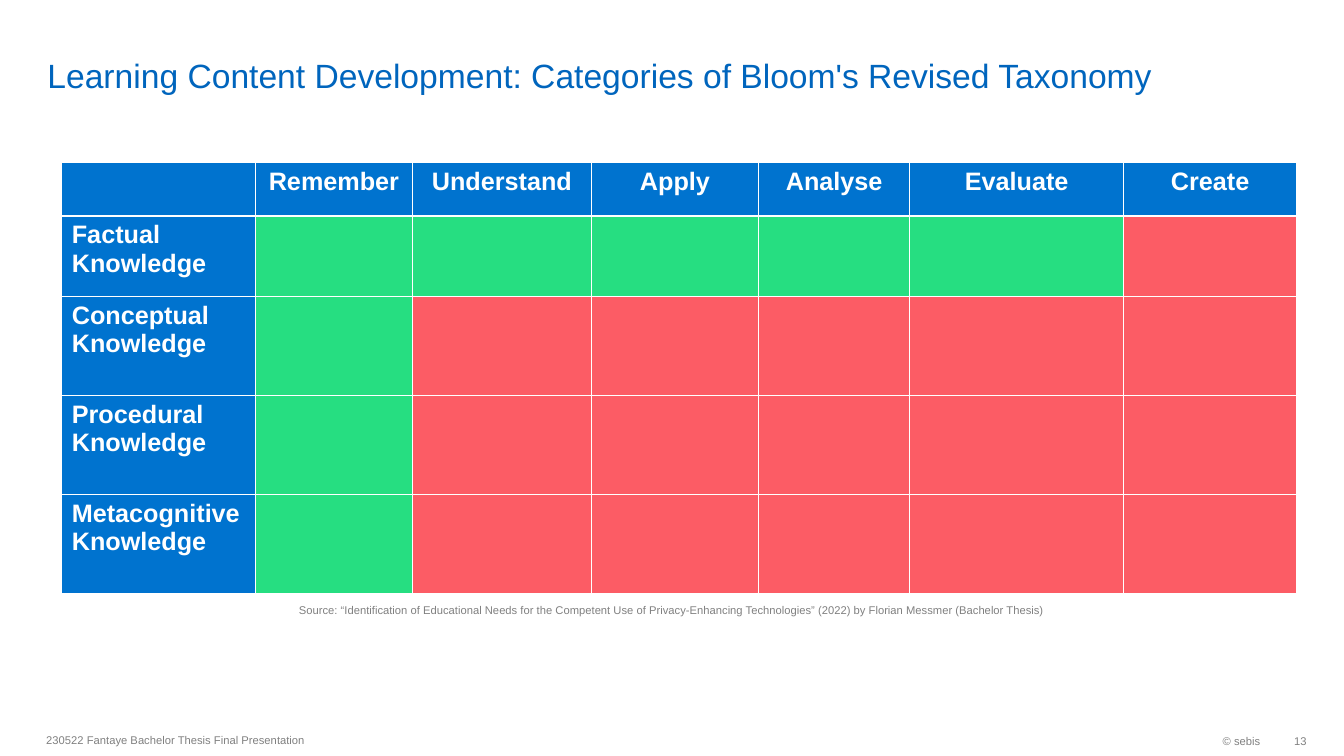
import dataclasses

import pptx
import pptx.dml.color
import pptx.enum.text
import pptx.util

ALIGN = pptx.enum.text.PP_ALIGN
ANCHOR = pptx.enum.text.MSO_ANCHOR


@dataclasses.dataclass(frozen=True)
class Theme:
    font: str = "Arial"
    title: str = "0065BD"
    head: str = "0073CF"
    white: str = "FFFFFF"
    grey: str = "808080"
    green: str = "26DE81"
    red: str = "FC5C65"
    large: int = 24
    mid: int = 18
    small: int = 8


class Deck:
    def __init__(self, theme):
        self.theme = theme
        self.file = pptx.Presentation()
        self.file.slide_width = pptx.util.Inches(13.33)
        self.file.slide_height = pptx.util.Inches(7.5)
        self.slide = self.file.slides.add_slide(self.file.slide_layouts[5])

    def wide(self, share):
        return round(self.file.slide_width * share / 100)

    def high(self, share):
        return round(self.file.slide_height * share / 100)

    def box(self, left, top, width, height):
        return self.wide(left), self.high(top), self.wide(width), self.high(height)

    def label(self, frame, text, size, color, align=ALIGN.LEFT, bold=False):
        para = frame.paragraphs[0]
        para.alignment = align
        run = para.add_run()
        run.text = text
        run.font.name = self.theme.font
        run.font.size = pptx.util.Pt(size)
        run.font.bold = bold
        run.font.color.rgb = pptx.dml.color.RGBColor.from_string(color)

    def title(self, text, place):
        shape = self.slide.shapes.title
        shape.left, shape.top, shape.width, shape.height = self.box(*place)
        frame = shape.text_frame
        frame.word_wrap = True
        frame.auto_size = pptx.enum.text.MSO_AUTO_SIZE.NONE
        frame.vertical_anchor = ANCHOR.BOTTOM
        frame.margin_top = frame.margin_bottom = 0
        self.label(frame, text, self.theme.large, self.theme.title)

    def note(self, text, place, align=ALIGN.LEFT, inset=0.1):
        frame = self.slide.shapes.add_textbox(*self.box(*place)).text_frame
        frame.word_wrap = True
        frame.vertical_anchor = ANCHOR.MIDDLE
        frame.margin_right = pptx.util.Inches(inset)
        self.label(frame, text, self.theme.small, self.theme.grey, align)

    def cell(self, cell, fill, text="", align=ALIGN.LEFT):
        cell.fill.solid()
        cell.fill.fore_color.rgb = pptx.dml.color.RGBColor.from_string(fill)
        if text:
            self.label(cell.text_frame, text, self.theme.mid, self.theme.white, align, True)

    def matrix(self, left, top, widths, heights, heads, levels):
        place = self.box(left, top, sum(widths), sum(heights))
        table = self.slide.shapes.add_table(len(heights), len(widths), *place).table
        table.first_col = True
        table.horz_banding = False
        for column, width in zip(table.columns, widths):
            column.width = self.wide(width)
        for row, height in zip(table.rows, heights):
            row.height = self.high(height)
        for col, head in enumerate(heads):
            self.cell(table.cell(0, col), self.theme.head, head, ALIGN.CENTER)
        for row, (level, reach) in enumerate(levels, 1):
            self.cell(table.cell(row, 0), self.theme.head, f"{level} Knowledge")
            for col in range(1, len(heads)):
                fill = self.theme.green if col <= reach else self.theme.red
                self.cell(table.cell(row, col), fill)


def main():
    deck = Deck(Theme())
    deck.title(
        "Learning Content Development: Categories of Bloom's Revised Taxonomy",
        (2.78, 2.13, 86.87, 10.53),
    )
    deck.note("© sebis", (76.97, 95.87, 17.55, 4.27), ALIGN.RIGHT)
    deck.note("13", (94.52, 95.87, 2.7, 4.27), ALIGN.RIGHT, 0)
    deck.note("230522 Fantaye Bachelor Thesis Final Presentation", (2.7, 95.73, 47.26, 4.27))
    deck.matrix(
        4.6,
        21.5,
        (14.4, 11.7, 13.3, 12.45, 11.25, 15.9, 12.9),
        (7.07, 10.67) + (13.1,) * 3,
        ("", "Remember", "Understand", "Apply", "Analyse", "Evaluate", "Create"),
        (("Factual", 5), ("Conceptual", 1), ("Procedural", 1), ("Metacognitive", 1)),
    )
    deck.note(
        "Source: “Identification of Educational Needs for the Competent Use of "
        "Privacy-Enhancing Technologies” (2022) by Florian Messmer (Bachelor Thesis)",
        (19.35, 78.53, 61.29, 4.27),
        ALIGN.CENTER,
    )
    deck.file.save("out.pptx")


if __name__ == "__main__":
    main()
